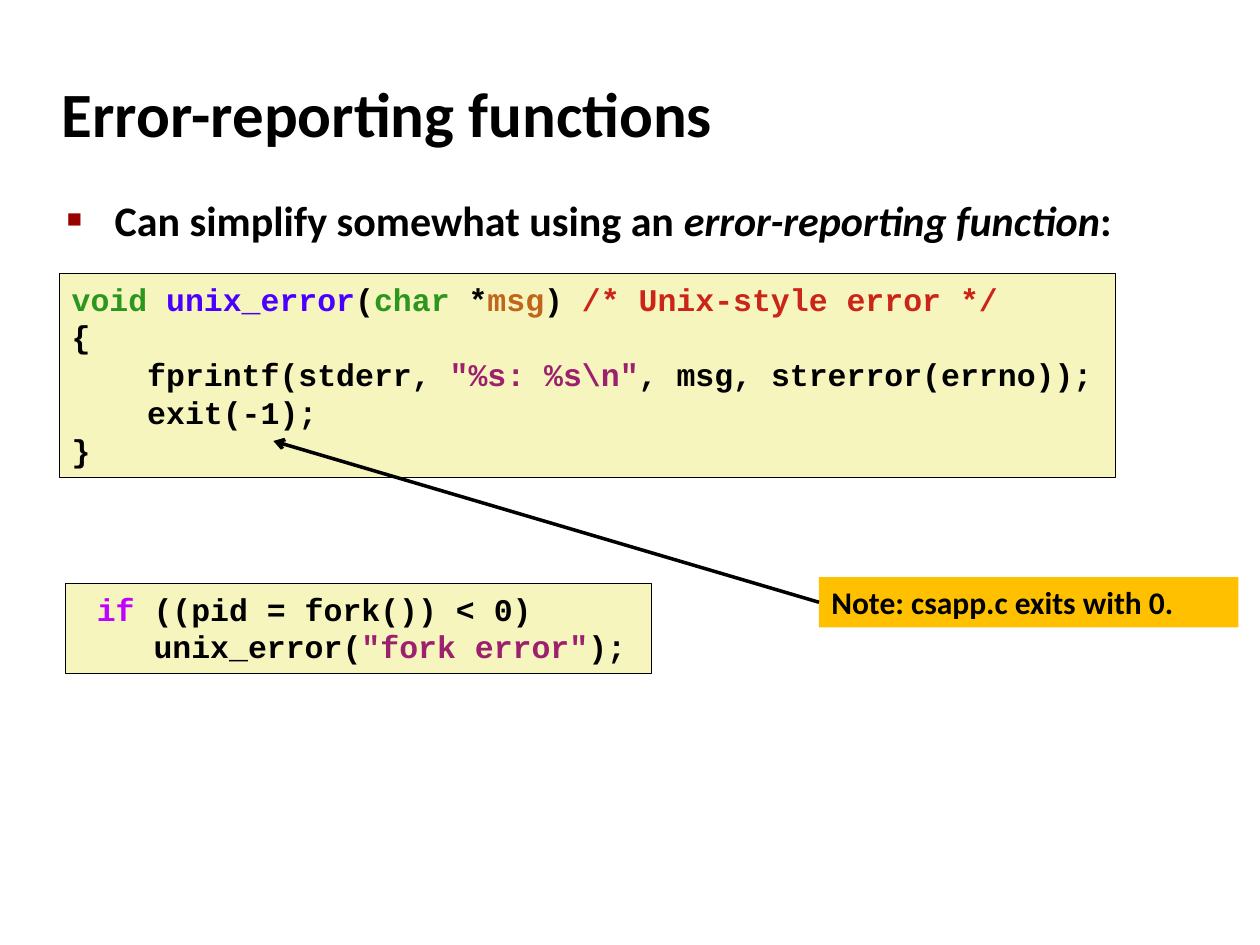
"""Build the slide on error-reporting functions."""
from dataclasses import dataclass

from lxml import etree
from pptx import Presentation
from pptx import util as u
from pptx.dml.color import RGBColor
from pptx.enum import shapes, text
from pptx.oxml import ns


@dataclass(frozen=True)
class Theme:
    """Colours, fonts and type sizes of the slide."""
    ink: str = "000000"
    bullet: str = "990000"
    code_fill: str = "F6F5BD"
    note_fill: str = "FFC000"
    type_name: str = "2D961E"
    function: str = "4A00FF"
    parameter: str = "C1651C"
    comment: str = "CB2418"
    string: str = "9D206F"
    keyword: str = "C200FF"
    prose: str = "Calibri"
    code: str = "Courier New"
    title_size: int = 36
    body_size: int = 24
    small_size: int = 18


THEME = Theme()

ERROR_FUNCTION = [
    [("void ", THEME.type_name), ("unix_error", THEME.function), ("(", THEME.ink),
     ("char", THEME.type_name), (" *", THEME.ink), ("msg", THEME.parameter),
     (") ", THEME.ink), ("/* Unix-style error */", THEME.comment)],
    [("{", THEME.ink)],
    [("    fprintf(stderr, ", THEME.ink), ('"%s: %s\\n"', THEME.string),
     (", msg, strerror(errno));", THEME.ink)],
    [("    exit(-1);", THEME.ink)],
    [("}", THEME.ink)],
]

FORK_CALL = [
    [(" ", THEME.ink), ("if", THEME.keyword), (" ((pid = fork()) < 0)", THEME.ink)],
    [("    unix_error(", THEME.ink), ('"fork error"', THEME.string), (");", THEME.ink)],
]


def set_values(target, values):
    """Set each attribute of target from a dict."""
    for name, value in values.items():
        setattr(target, name, value)


def add_run(paragraph, words, size, font=THEME.prose, color=THEME.ink, italic=False):
    """Append one bold run of text."""
    run = paragraph.add_run()
    run.text = words
    set_values(run.font, {"name": font, "size": u.Pt(size), "bold": True, "italic": italic})
    run.font.color.rgb = RGBColor.from_string(color)


def place(placeholder, left, top, width, height, anchor, indent):
    """Move a placeholder and return its first paragraph with a hanging indent."""
    set_values(placeholder, {"left": u.Inches(left), "top": u.Inches(top),
                             "width": u.Inches(width), "height": u.Inches(height)})
    set_values(placeholder.text_frame, {"vertical_anchor": anchor, "word_wrap": True,
                                        "auto_size": text.MSO_AUTO_SIZE.NONE})
    paragraph = placeholder.text_frame.paragraphs[0]
    paragraph.alignment = text.PP_ALIGN.LEFT
    properties = paragraph._p.get_or_add_pPr()
    properties.set("marL", str(u.Inches(indent)))
    properties.set("indent", str(-u.Inches(indent)))
    return paragraph


def add_bullet(paragraph, color, percent, mark):
    """Give a paragraph a coloured bullet mark."""
    properties = paragraph._p.get_or_add_pPr()
    tint = etree.SubElement(properties, ns.qn("a:buClr"))
    etree.SubElement(tint, ns.qn("a:srgbClr"), val=color)
    etree.SubElement(properties, ns.qn("a:buSzPct"), val=str(percent * 1000))
    etree.SubElement(properties, ns.qn("a:buFont"), typeface="Arial")
    etree.SubElement(properties, ns.qn("a:buChar"), char=mark)


def add_box(parent, left, top, width, height, fill, wrap):
    """Add a filled rectangle without an outline, ready for left-aligned text."""
    box = parent.shapes.add_shape(shapes.MSO_SHAPE.RECTANGLE, u.Inches(left),
                                  u.Inches(top), u.Inches(width), u.Inches(height))
    box.shadow.inherit = False
    box.fill.solid()
    box.fill.fore_color.rgb = RGBColor.from_string(fill)
    box.line.fill.background()
    set_values(box.text_frame, {"word_wrap": wrap,
                                "vertical_anchor": text.MSO_ANCHOR.TOP,
                                "auto_size": text.MSO_AUTO_SIZE.SHAPE_TO_FIT_TEXT})
    box.text_frame.paragraphs[0].alignment = text.PP_ALIGN.LEFT
    return box


def add_code(slide, left, top, width, height, lines):
    """Add an outlined box of coloured code lines."""
    listing = add_box(slide, left, top, width, height, THEME.code_fill, False)
    listing.line.color.rgb = RGBColor.from_string(THEME.ink)
    listing.line.width = u.Pt(0.25)
    frame = listing.text_frame
    for number, tokens in enumerate(lines):
        paragraph = frame.add_paragraph() if number else frame.paragraphs[0]
        paragraph.alignment = text.PP_ALIGN.LEFT
        for words, color in tokens:
            add_run(paragraph, words, THEME.small_size, THEME.code, color)


def add_note(slide, words, left, top, width, height, target):
    """Add a note with an arrow from its left side to a target point."""
    callout = slide.shapes.add_group_shape()
    note = add_box(callout, left, top, width, height, THEME.note_fill, True)
    add_run(note.text_frame.paragraphs[0], words, THEME.small_size)
    start = u.Inches(left), u.Inches(top + height / 2)
    end = [u.Inches(length) for length in target]
    arrow = callout.shapes.add_connector(shapes.MSO_CONNECTOR.STRAIGHT, *start, *end)
    arrow.begin_connect(note, 1)
    arrow.line.color.rgb = RGBColor.from_string(THEME.ink)
    arrow.line.width = u.Pt(2)
    etree.SubElement(arrow.line._get_or_add_ln(), ns.qn("a:tailEnd"), type="arrow")
    etree.SubElement(arrow._element.spPr, ns.qn("a:effectLst"))


def main():
    """Build and save the slide."""
    deck = Presentation()
    set_values(deck, {"slide_width": u.Inches(10), "slide_height": u.Inches(7.5)})
    slide = deck.slides.add_slide(deck.slide_layouts[1])

    title = place(slide.shapes.title, 0.39, 0.48, 8.3, 0.83, text.MSO_ANCHOR.MIDDLE, 0.13)
    add_run(title, "Error-reporting functions", THEME.title_size)

    point = place(slide.placeholders[1], 0.43, 1.49, 8.64, 0.51, text.MSO_ANCHOR.TOP, 0.38)
    add_bullet(point, THEME.bullet, 60, "■")
    add_run(point, "Can simplify somewhat using an ", THEME.body_size)
    add_run(point, "error-reporting function", THEME.body_size, italic=True)
    add_run(point, ":", THEME.body_size)

    add_code(slide, 0.47, 2.17, 8.38, 1.62, ERROR_FUNCTION)
    add_code(slide, 0.52, 4.63, 4.65, 0.71, FORK_CALL)
    add_note(slide, "Note: csapp.c exits with 0.", 6.5, 4.58, 3.33, 0.4, (2.17, 3.5))
    deck.save("out.pptx")


if __name__ == "__main__":
    main()
